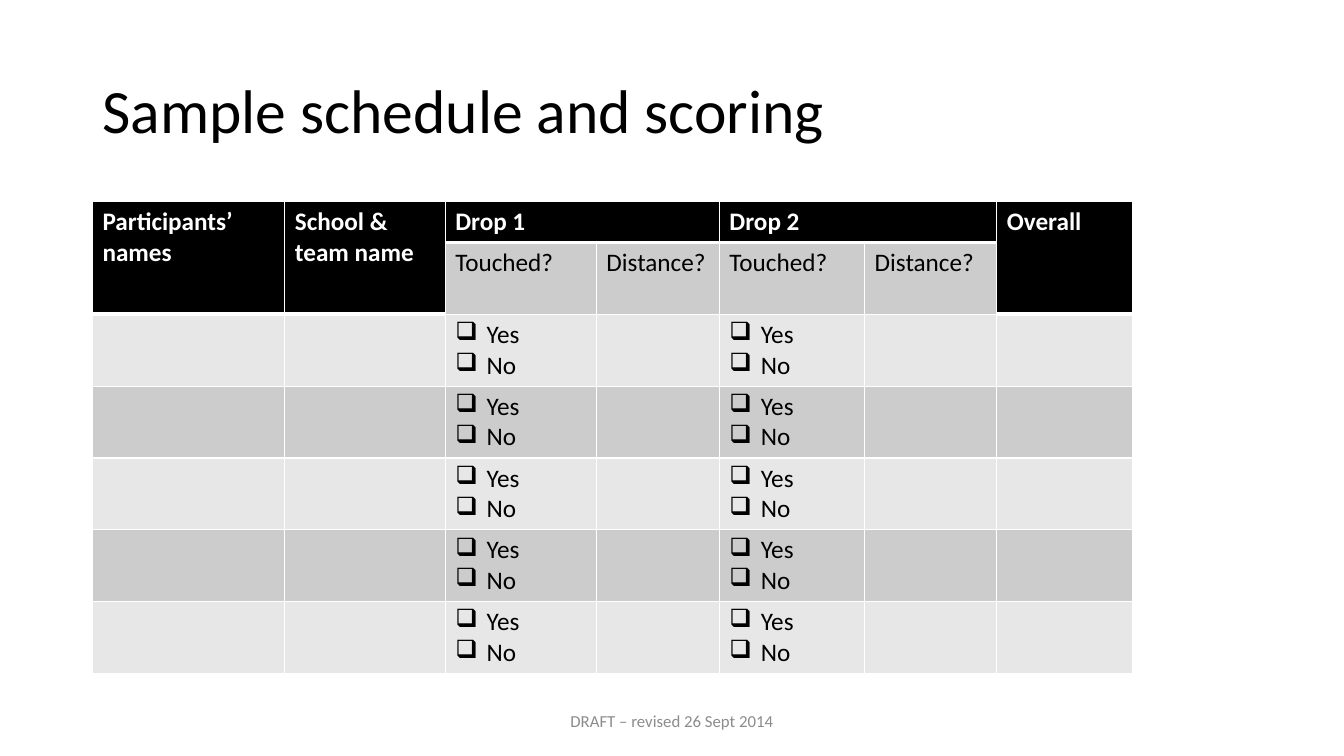
import pptx
import pptx.util
import pptx.dml.color
import pptx.enum.text
import pptx.oxml
import pptx.oxml.ns

Cm, Pt = pptx.util.Cm, pptx.util.Pt
ALIGN = pptx.enum.text.PP_ALIGN
MIDDLE = pptx.enum.text.MSO_ANCHOR.MIDDLE

TITLE = "Sample schedule and scoring"
FOOTER = "DRAFT – revised 26 Sept 2014"
HEADS = ["Participants’ names", "School & team name", "Drop 1", "",
         "Drop 2", "", "Overall"]
SUBS = ["", "", "Touched?", "Distance?", "Touched?", "Distance?", ""]
ENTRY = ["", "", "Yes\nNo", "", "Yes\nNo", "", ""]
ROWS = [HEADS, SUBS] + [ENTRY] * 5
MERGES = [((0, 0), (1, 0)), ((0, 1), (1, 1)), ((0, 2), (0, 3)),
          ((0, 4), (0, 5)), ((0, 6), (1, 6))]
WIDTHS = [4.85, 4.04, 3.81, 3.1, 3.66, 3.33, 3.43]
TOP, REST = 1.03, 1.81
BLACK, WHITE, GREY = "000000", "FFFFFF", "8C8C8C"
DARK, LIGHT = "CCCCCC", "E7E7E7"


def color(code):
    return pptx.dml.color.RGBColor.from_string(code)


def style(para, size, code, bold=False):
    font = para.font
    font.name, font.size, font.bold = "Calibri", Pt(size), bold
    font.color.rgb = color(code)


def is_head(row, col):
    return row == 0 or (row == 1 and not SUBS[col])


def add_edges(cell, row, col):
    """Draw white cell borders, thick below the black heads."""
    above = row > 0 and is_head(row - 1, col)
    thick = {"T": above, "B": is_head(row, col)}
    props = cell._tc.get_or_add_tcPr()
    for side in "LRTB":
        width = Pt(3 if thick.get(side) else 1)
        props.append(pptx.oxml.parse_xml(
            f'<a:ln{side} {pptx.oxml.ns.nsdecls("a")} w="{width}"><a:solidFill>'
            f'<a:srgbClr val="{WHITE}"/></a:solidFill></a:ln{side}>'))


def add_box(para):
    """Put a tick box in front of the paragraph."""
    props = para._p.get_or_add_pPr()
    props.set("marL", str(Cm(0.79)))
    props.set("indent", str(-Cm(0.79)))
    mark = pptx.oxml.parse_xml(
        f'<a:buChar {pptx.oxml.ns.nsdecls("a")} char="❑"/>')
    props.insert(0, mark)


def fill_cell(cell, row, col):
    head = is_head(row, col)
    add_edges(cell, row, col)
    cell.fill.solid()
    cell.fill.fore_color.rgb = color(
        BLACK if head else DARK if row % 2 else LIGHT)
    cell.text = ROWS[row][col]
    for para in cell.text_frame.paragraphs:
        style(para, 18, WHITE if head else BLACK, head)
        if row > 1 and para.text:
            add_box(para)


def add_title(slide):
    title = slide.shapes.title
    title.left, title.top = Cm(2.33), Cm(1.01)
    title.width, title.height = Cm(29.21), Cm(3.68)
    title.text_frame.text = TITLE
    title.text_frame.vertical_anchor = MIDDLE
    para = title.text_frame.paragraphs[0]
    para.alignment, para.line_spacing = ALIGN.LEFT, 0.9
    style(para, 44, BLACK)


def add_grid(slide):
    heights = [TOP] + [REST] * (len(ROWS) - 1)
    table = slide.shapes.add_table(
        len(ROWS), len(WIDTHS), Cm(2.33), Cm(5.08),
        Cm(sum(WIDTHS)), Cm(sum(heights))).table
    for col, width in zip(table.columns, WIDTHS):
        col.width = Cm(width)
    for row, height in zip(table.rows, heights):
        row.height = Cm(height)
    for row in range(len(ROWS)):
        for col in range(len(WIDTHS)):
            fill_cell(table.cell(row, col), row, col)
    for start, end in MERGES:
        table.cell(*start).merge(table.cell(*end))


def add_footer(slide):
    frame = slide.shapes.add_textbox(
        Cm(11.22), Cm(17.65), Cm(11.43), Cm(1.01)).text_frame
    frame.word_wrap, frame.vertical_anchor = True, MIDDLE
    frame.text = FOOTER
    frame.paragraphs[0].alignment = ALIGN.CENTER
    style(frame.paragraphs[0], 12, GREY)


def main():
    deck = pptx.Presentation()
    deck.slide_width, deck.slide_height = Cm(33.87), Cm(19.05)
    slide = deck.slides.add_slide(deck.slide_layouts[5])
    add_title(slide)
    add_grid(slide)
    add_footer(slide)
    deck.save("out.pptx")


if __name__ == "__main__":
    main()
